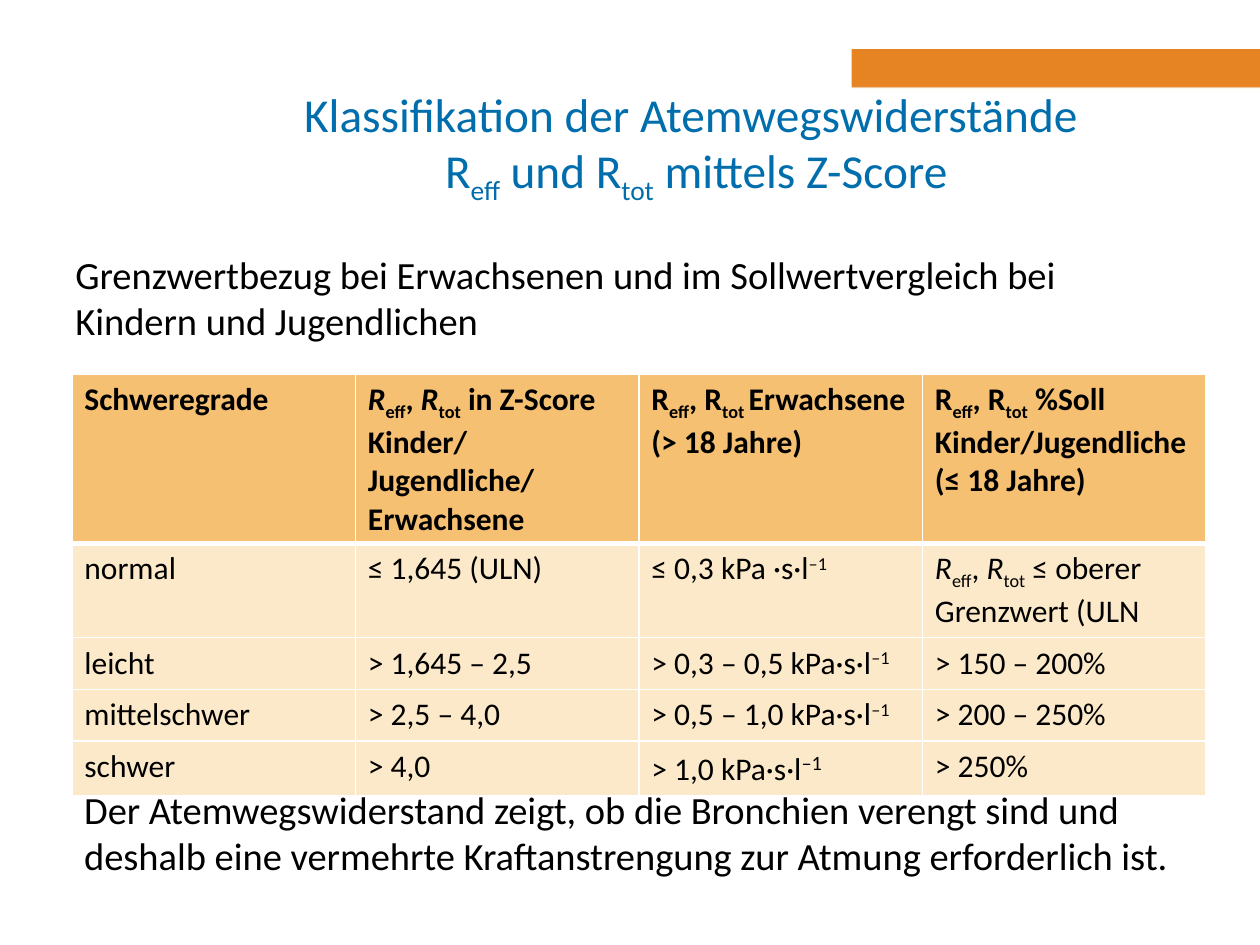
from lxml import etree
from pptx import Presentation, util as u
from pptx.dml import color
from pptx.enum import shapes, text
from pptx.oxml import ns

COLUMN = ROW = u.Inches(0.1)
ORANGE, HEADER, BAND = "E68323", "F5C071", "FBE9C9"
BLUE, BLACK, WHITE = "006EAC", "000000", "FFFFFF"
BASELINES = {"_": -25000, "^": 30000, "+": 30000}
LARGE_EXPONENT = 20

GRADES = [
    ["Schweregrade",
     "*R|_eff|, |*R|_tot| in Z-Score\nKinder/Jugendliche/Erwachsene",
     "R|_eff|, R|_tot |Erwachsene\n(> 18 Jahre)",
     "R|_eff|, R|_tot| %Soll\nKinder/Jugendliche (≤ 18 Jahre)"],
    ["normal", "≤ 1,645 (ULN)", "≤ 0,3 kPa ·s·l|^–1",
     "*R|_eff|, |*R|_tot| ≤ oberer Grenzwert (ULN"],
    ["leicht", "> 1,645 – 2,5", "> 0,3 – 0,5 kPa·s·l|^–1", "> 150 – 200%"],
    ["mittelschwer", "> 2,5 – 4,0", "> 0,5 – 1,0 kPa·s·l|^–1", "> 200 – 250%"],
    ["schwer", "> 4,0", "> 1,0 kPa·s·l|+–1", "> 250%"],
]
GRADE_ROWS = [13.4, 7.5, 4.1, 4.1, 4.3]


def rgb(value):
    return color.RGBColor.from_string(value)


def place(box):
    left, top, width, height = box
    return (round(left * COLUMN), round(top * ROW),
            round(width * COLUMN), round(height * ROW))


def write(frame, content, size=18, ink=BLACK, bold=False, align=None):
    frame.word_wrap = True
    for index, line in enumerate(content.split("\n")):
        paragraph = frame.add_paragraph() if index else frame.paragraphs[0]
        paragraph.alignment = align
        for part in line.split("|"):
            if part == "\v":
                paragraph.add_line_break()
                continue
            mark = part[0] if part[0] in "_^+*" else ""
            run = paragraph.add_run()
            run.text = part[len(mark):]
            run.font.name = "Calibri"
            run.font.size = u.Pt(LARGE_EXPONENT if mark == "+" else size)
            run.font.bold = bold
            run.font.italic = mark == "*"
            run.font.color.rgb = rgb(ink)
            if mark in BASELINES:
                run._r.get_or_add_rPr().set("baseline", str(BASELINES[mark]))


def add_block(slide, box, fill, opacity=100):
    block = slide.shapes.add_shape(shapes.MSO_SHAPE.RECTANGLE, *place(box))
    block.shadow.inherit = False
    block.line.fill.background()
    block.fill.solid()
    block.fill.fore_color.rgb = rgb(fill)
    if opacity < 100:
        tone = block.fill._xPr.find(".//" + ns.qn("a:srgbClr"))
        etree.SubElement(tone, ns.qn("a:alpha")).set("val", str(opacity * 1000))


def add_passage(slide, box, content, anchor=text.MSO_ANCHOR.TOP, **style):
    frame = slide.shapes.add_textbox(*place(box)).text_frame
    frame.vertical_anchor = anchor
    write(frame, content, **style)


def add_heading(slide, box):
    left, top, width, height = box
    add_block(slide, (67.6, top - 3, 32.4, 3.1), ORANGE)
    add_block(slide, (0, top, 100, height), WHITE, opacity=55)
    add_passage(slide, box,
                "Klassifikation der Atemwegswiderstände |\v|"
                "R|_eff| und R|_tot| mittels Z-Score",
                anchor=text.MSO_ANCHOR.MIDDLE, size=27, ink=BLUE,
                align=text.PP_ALIGN.CENTER)


def border_cell(cell, bottom):
    properties = cell._tc.get_or_add_tcPr()
    widths = {"a:lnL": 1, "a:lnR": 1, "a:lnT": 1, "a:lnB": bottom}
    for position, (edge, points) in enumerate(widths.items()):
        line = etree.Element(ns.qn(edge), w=str(u.Pt(points)))
        fill = etree.SubElement(line, ns.qn("a:solidFill"))
        etree.SubElement(fill, ns.qn("a:srgbClr")).set("val", WHITE)
        properties.insert(position, line)


def add_grades(slide, box):
    grid = slide.shapes.add_table(len(GRADES), len(GRADES[0]), *place(box)).table
    for row, (height, grades) in enumerate(zip(GRADE_ROWS, GRADES)):
        grid.rows[row].height = round(height * ROW)
        heading = row == 0
        for column, content in enumerate(grades):
            cell = grid.cell(row, column)
            cell.fill.solid()
            cell.fill.fore_color.rgb = rgb(HEADER if heading else BAND)
            write(cell.text_frame, content, bold=heading)
            border_cell(cell, bottom=3 if heading else 1)


def main():
    deck = Presentation()
    deck.slide_width, deck.slide_height = 100 * COLUMN, 75 * ROW
    slide = deck.slides.add_slide(deck.slide_layouts[6])
    add_heading(slide, (14.8, 6.9, 80.9, 9.3))
    add_passage(slide, (5, 19.4, 90, 9.3),
                "Grenzwertbezug bei Erwachsenen und im Sollwertvergleich "
                "bei Kindern und Jugendlichen", size=22)
    add_grades(slide, (5.7, 29.7, 90, sum(GRADE_ROWS)))
    add_passage(slide, (5.7, 61.9, 90, 8.4),
                "Der Atemwegswiderstand zeigt, ob die Bronchien verengt sind und "
                "deshalb eine vermehrte Kraftanstrengung zur Atmung "
                "erforderlich ist.", size=22)
    deck.save("out.pptx")


if __name__ == "__main__":
    main()
